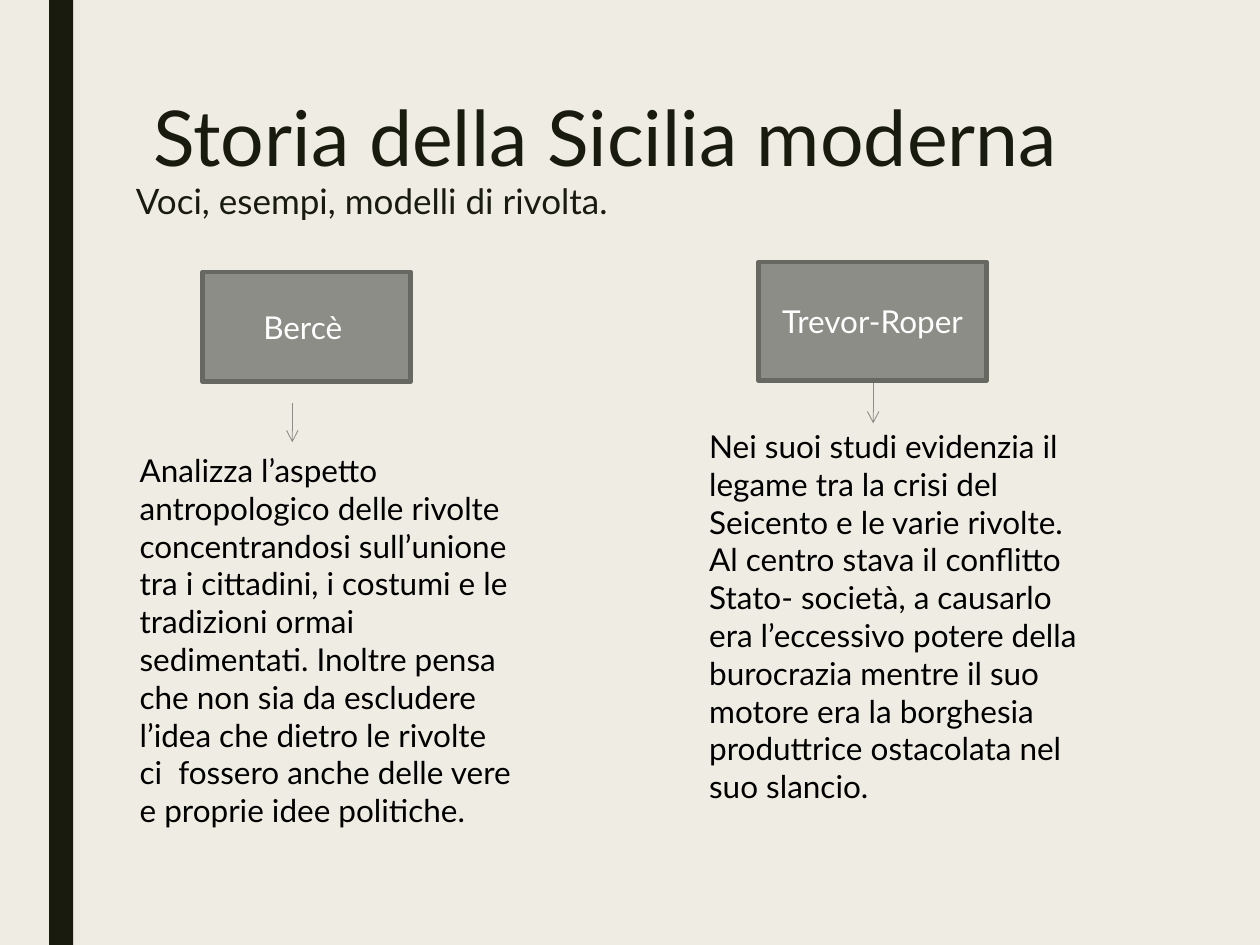
from dataclasses import dataclass

from lxml import etree
from pptx import Presentation
from pptx import util as u
from pptx.dml.color import RGBColor
from pptx.enum import shapes, text
from pptx.oxml.ns import qn


@dataclass(frozen=True)
class Theme:
    font: str = "Lato"
    paper: RGBColor = RGBColor(0xEF, 0xED, 0xE3)
    ink: RGBColor = RGBColor(0x19, 0x1B, 0x0E)
    black: RGBColor = RGBColor(0, 0, 0)
    white: RGBColor = RGBColor(255, 255, 255)
    grey: RGBColor = RGBColor(0x8C, 0x8D, 0x86)
    border: RGBColor = RGBColor(0x68, 0x68, 0x63)
    title_size: int = 44
    subtitle_size: int = 20
    body_size: int = 18


theme = Theme()
deck = Presentation()
deck.slide_width, deck.slide_height = u.Inches(10), u.Inches(7.5)
page = deck.slides.add_slide(deck.slide_layouts[6])
page.background.fill.solid()
page.background.fill.fore_color.rgb = theme.paper


def cells(*values):
    """Turn counts of grid cells (100 columns by 75 rows) into lengths."""
    return [round(deck.slide_width / 100 * value) for value in values]


def write(box, lines, size, color, spacing=1.0, align=text.PP_ALIGN.LEFT):
    frame = box.text_frame
    frame.word_wrap = True
    frame.text = "\n".join(lines)
    for para in frame.paragraphs:
        para.alignment = align
        para.line_spacing = spacing
        para.font.name = theme.font
        para.font.size = u.Pt(size)
        para.font.color.rgb = color


side_bar = page.shapes.add_shape(shapes.MSO_SHAPE.RECTANGLE, *cells(3.9, 0, 1.9, 75))
side_bar.shadow.inherit = False
side_bar.fill.solid()
side_bar.fill.fore_color.rgb = theme.ink
side_bar.line.fill.background()

title = page.shapes.add_textbox(*cells(11.2, 7.5, 78.8, 16.2))
write(title, ["Storia della Sicilia moderna"], theme.title_size, theme.ink, 0.89)
subtitle = page.shapes.add_textbox(*cells(9.8, 14, 78.8, 39.2))
write(subtitle, ["Voci, esempi, modelli di rivolta."], theme.subtitle_size, theme.ink, 0.94)

# Each historian: name, name box, arrow (column, top, bottom), text box, paragraphs
historians = [
    ("Bercè ", (16.1, 21.6, 16.5, 8.7), (23.2, 32, 35.1), (10.1, 35.3, 31.5, 28.3), [
        "Analizza l’aspetto antropologico delle rivolte concentrandosi sull’unione "
        "tra i cittadini, i costumi e le tradizioni ormai sedimentati. Inoltre pensa "
        "che non sia da escludere l’idea che dietro le rivolte ci  fossero anche "
        "delle vere e proprie idee politiche.",
    ]),
    ("Trevor-Roper", (60.2, 20.8, 18.1, 9.4), (69.3, 30.4, 33.6), (55.3, 33.4, 31.5, 31.3), [
        "Nei suoi studi evidenzia il legame tra la crisi del Seicento e le varie rivolte.",
        "Al centro stava il conflitto Stato- società, a causarlo era l’eccessivo potere "
        "della burocrazia mentre il suo motore era la borghesia produttrice ostacolata "
        "nel suo slancio.",
    ]),
]

for name, name_place, (column, top, bottom), view_place, view in historians:
    name_box = page.shapes.add_shape(shapes.MSO_SHAPE.RECTANGLE, *cells(*name_place))
    name_box.shadow.inherit = False
    name_box.fill.solid()
    name_box.fill.fore_color.rgb = theme.grey
    name_box.line.color.rgb = theme.border
    name_box.line.width = u.Pt(2.75)
    name_box.text_frame.vertical_anchor = text.MSO_ANCHOR.MIDDLE
    write(name_box, [name], theme.body_size, theme.white, align=text.PP_ALIGN.CENTER)

    arrow = page.shapes.add_connector(
        shapes.MSO_CONNECTOR.STRAIGHT, *cells(column, top, column, bottom))
    arrow.line.color.rgb = theme.grey
    arrow.line.width = u.Pt(0.5)
    etree.SubElement(arrow.line._get_or_add_ln(), qn("a:tailEnd"), type="arrow")
    etree.SubElement(arrow._element.spPr, qn("a:effectLst"))

    view_box = page.shapes.add_textbox(*cells(*view_place))
    write(view_box, view, theme.body_size, theme.black)
    view_box.text_frame.auto_size = text.MSO_AUTO_SIZE.SHAPE_TO_FIT_TEXT

deck.save("out.pptx")
